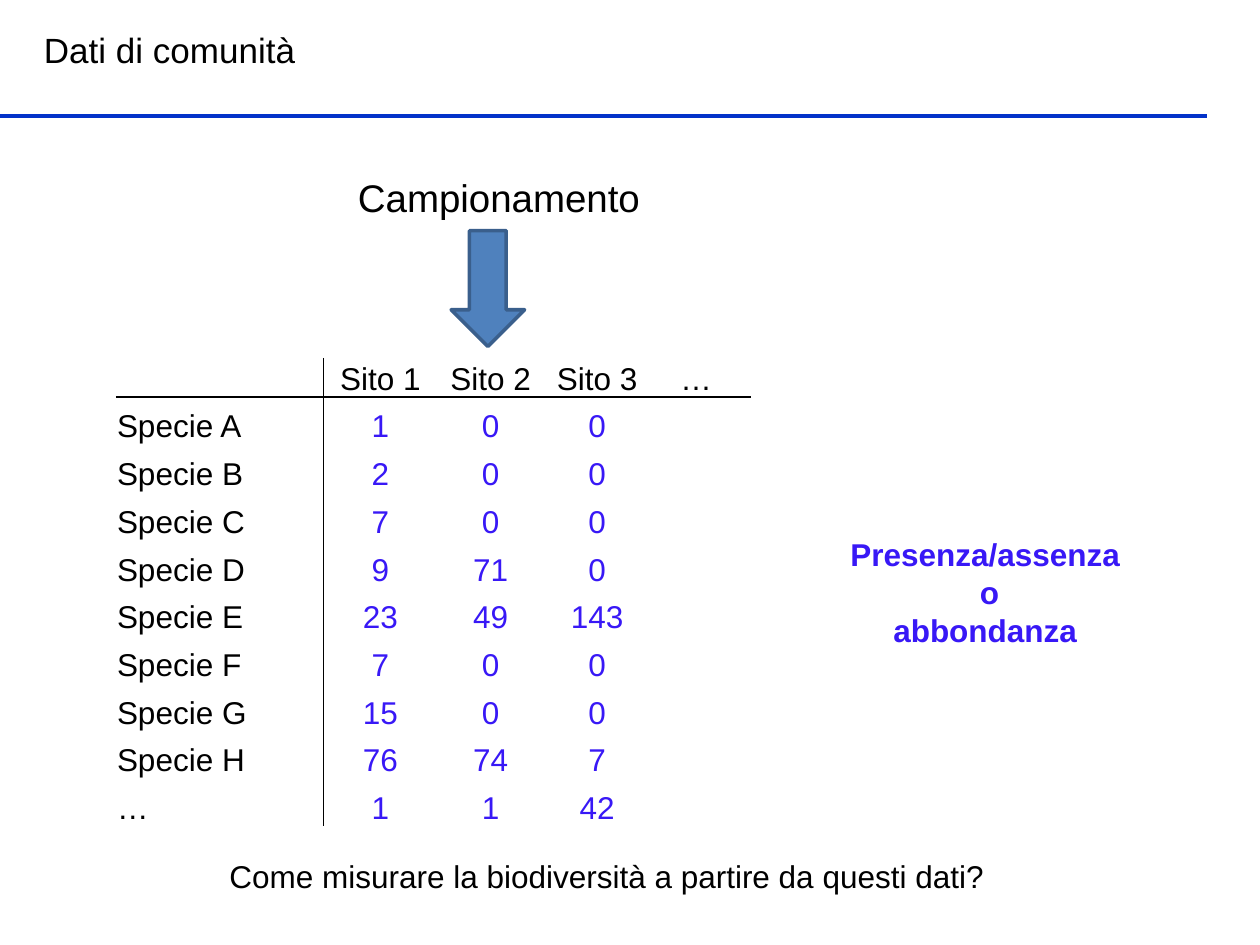
from lxml.etree import SubElement
from pptx import Presentation
from pptx.dml.color import RGBColor
from pptx.enum.shapes import MSO_CONNECTOR, MSO_SHAPE
from pptx.enum.text import MSO_ANCHOR, PP_ALIGN
from pptx.oxml.ns import qn
from pptx.util import Pt

BLACK, BLUE, VIOLET = "000000", "0332C9", "3818F6"
HEAD = ["", "Sito 1", "Sito 2", "Sito 3", "… "]
ROWS = [
    ["Specie A", "1", "0", "0", ""],
    ["Specie B", "2", "0", "0", ""],
    ["Specie C", "7", "0", "0", ""],
    ["Specie D", "9", "71", "0", ""],
    ["Specie E", "23", "49", "143", ""],
    ["Specie F", "7", "0", "0", ""],
    ["Specie G", "15", "0", "0", ""],
    ["Specie H", "76", "74", "7", ""],
    ["…", "1", "1", "42", ""],
]
WIDTHS = [118.8, 64.8, 61.2, 60.5, 57.6]


def color(code):
    return RGBColor.from_string(code)


def apply(item, **values):
    for name, value in values.items():
        setattr(item, name, value)


def write(para, text, size, code, align, bold=False):
    para.alignment = align
    run = para.add_run()
    run.text = text
    apply(run.font, name="Arial", size=Pt(size), bold=bold)
    run.font.color.rgb = color(code)


def label(slide, box, lines, size=18, code=BLACK, align=PP_ALIGN.CENTER,
          anchor=MSO_ANCHOR.TOP, bold=False):
    frame = slide.shapes.add_textbox(*map(Pt, box)).text_frame
    apply(frame, word_wrap=True, vertical_anchor=anchor)
    for pos, text in enumerate(lines):
        para = frame.add_paragraph() if pos else frame.paragraphs[0]
        write(para, text, size, code, align, bold)


def header(slide, box):
    left, top, width, height = box
    label(slide, (left + 18, top + 12.2, 492, 31.7), ["Dati di comunità"],
          20, align=PP_ALIGN.LEFT, anchor=MSO_ANCHOR.MIDDLE)
    base = top + height
    rule = slide.shapes.add_connector(
        MSO_CONNECTOR.STRAIGHT, Pt(left), Pt(base), Pt(left + width), Pt(base))
    rule.line.color.rgb = color(BLUE)
    rule.line.width = Pt(2)
    SubElement(rule._element.spPr, qn("a:effectLst"))


def sampling(slide, box):
    left, top, width, height = box
    label(slide, (left, top, width, 33.8), ["Campionamento"], 22)
    arrow = slide.shapes.add_shape(
        MSO_SHAPE.DOWN_ARROW, *map(Pt, (left + 77.8, top + 36, 42, height - 36)))
    arrow.shadow.inherit = False
    arrow.fill.solid()
    arrow.fill.fore_color.rgb = color("4F81BD")
    arrow.line.color.rgb = color("3A5F8C")
    arrow.line.width = Pt(2)


def borders(cell, sides):
    props = cell._tc.get_or_add_tcPr()
    for pos, side in enumerate("LRTB"):
        line = SubElement(props, qn("a:ln" + side), w=str(Pt(1)))
        if side in sides:
            fill = SubElement(line, qn("a:solidFill"))
            SubElement(fill, qn("a:srgbClr"), val=BLACK)
        else:
            SubElement(line, qn("a:noFill"))
        props.insert(pos, line)


def community(slide, box):
    data = [HEAD] + ROWS
    left, top, width, height = box
    table = slide.shapes.add_table(
        len(data), len(HEAD), *map(Pt, box)).table
    apply(table, first_row=False, horz_banding=False)
    for col, size in zip(table.columns, WIDTHS):
        col.width = Pt(size)
    first = 20.9
    step = (height - first) / len(ROWS)
    for r, row in enumerate(data):
        table.rows[r].height = Pt(first if r == 0 else step)
        for c, text in enumerate(row):
            cell = table.cell(r, c)
            apply(cell, margin_left=Pt(0.7), margin_right=Pt(0.7),
                  margin_top=Pt(0.7), margin_bottom=0,
                  vertical_anchor=MSO_ANCHOR.BOTTOM)
            cell.fill.background()
            sides = {0: "B", 1: "T"}.get(r, "") + {0: "R", 1: "L"}.get(c, "")
            borders(cell, sides)
            para = cell.text_frame.paragraphs[0]
            if text:
                write(para, text, 18, VIOLET if r and c else BLACK,
                      PP_ALIGN.CENTER if c else PP_ALIGN.LEFT)
            else:
                SubElement(para._p, qn("a:endParaRPr"), sz="1200")


def main():
    deck = Presentation()
    apply(deck, slide_width=Pt(720), slide_height=Pt(540))
    slide = deck.slides.add_slide(deck.slide_layouts[6])
    header(slide, (0, 0, 689.8, 66.2))
    community(slide, (66.2, 204.5, sum(WIDTHS), 266.4))
    label(slide, (422.6, 302.4, 280.8, 72.7),
          ["Presenza/assenza", " o", "abbondanza"], code=VIOLET, bold=True)
    label(slide, (12.2, 486, 668.9, 28.8),
          ["Come misurare la biodiversità a partire da questi dati?"])
    sampling(slide, (180, 95.8, 210.2, 102.2))
    deck.save("out.pptx")


if __name__ == "__main__":
    main()
